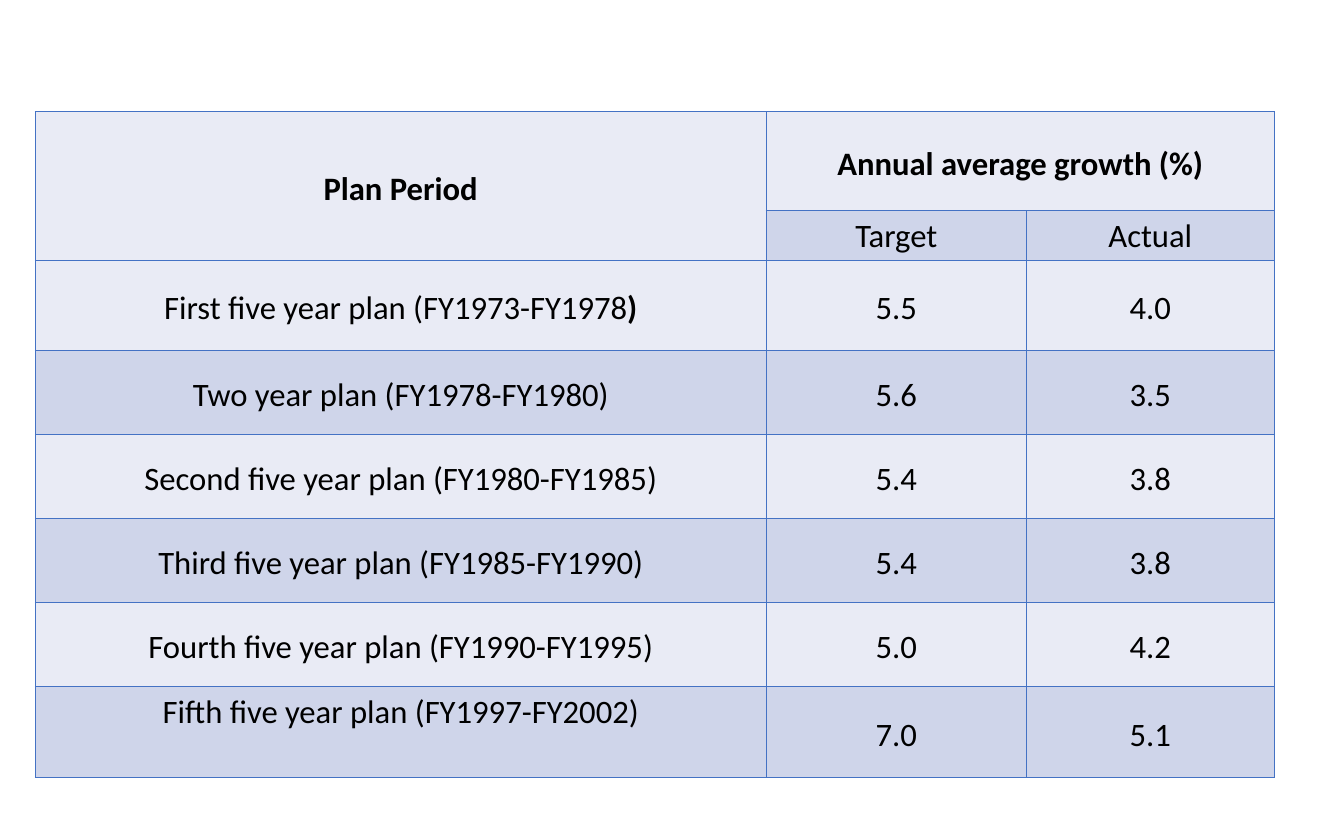
from lxml import etree
from pptx import Presentation
from pptx.dml.color import RGBColor
from pptx.enum.text import MSO_ANCHOR, PP_ALIGN
from pptx.oxml.ns import qn
from pptx.util import Inches, Pt

CENTER = PP_ALIGN.CENTER
TOP, MIDDLE = MSO_ANCHOR.TOP, MSO_ANCHOR.MIDDLE

COLUMN_WIDTHS = [8.7, 3.1, 2.95]
ROW_HEIGHTS = [1.18, 0.59, 1.07, 1, 1, 1, 1, 1.09]
HEADER_ROW, SUBHEADER_ROW = 0, 1
ROWS = [
    ["Plan Period", "Annual average growth (%)", ""],
    ["", "Target", "Actual"],
    ["First five year plan (FY1973-FY1978", "5.5", "4.0"],
    ["Two year plan (FY1978-FY1980)", "5.6", "3.5"],
    ["Second five year plan (FY1980-FY1985)", "5.4", "3.8"],
    ["Third five year plan (FY1985-FY1990)", "5.4", "3.8"],
    ["Fourth five year plan (FY1990-FY1995)", "5.0", "4.2"],
    ["Fifth five year plan (FY1997-FY2002)", "7.0", "5.1"],
]
BOLD_ENDINGS = {(2, 0): ")"}
MERGES = [((0, 0), (1, 0)), ((0, 1), (0, 2))]
TOP_ANCHORED = {(1, 1), (1, 2), (7, 0)}


def color(value):
    return RGBColor.from_string(value)


class GrowthSlide:
    """Holds the table style and the slide being built."""

    font = {"name": "Calibri", "size": Pt(28)}
    cell_format = {"margin_left": Inches(0.12), "margin_right": Inches(0.12),
                   "margin_top": 0, "margin_bottom": 0}
    paragraph_format = {"alignment": CENTER, "line_spacing": 1.15}
    text_color = "000000"
    border_color = "4472C4"
    bands = ["E9EBF5", "CFD5EA"]

    def __init__(self, presentation):
        self.slide = presentation.slides.add_slide(presentation.slide_layouts[6])

    def apply(self, target, values):
        for name, value in values.items():
            setattr(target, name, value)

    def run(self, paragraph, text, bold):
        run = paragraph.add_run()
        run.text = text
        self.apply(run.font, {**self.font, "bold": bold})
        run.font.color.rgb = color(self.text_color)

    def borders(self, cell):
        properties = cell._tc.get_or_add_tcPr()
        for side in ("lnL", "lnR", "lnT", "lnB"):
            line = etree.SubElement(properties, qn(f"a:{side}"), w=str(Pt(1)))
            fill = etree.SubElement(line, qn("a:solidFill"))
            etree.SubElement(fill, qn("a:srgbClr"), val=self.border_color)

    def cell(self, cell, text, band, anchor, bold, bold_ending):
        self.borders(cell)
        cell.fill.solid()
        cell.fill.fore_color.rgb = color(self.bands[band])
        self.apply(cell, {**self.cell_format, "vertical_anchor": anchor})
        paragraph = cell.text_frame.paragraphs[0]
        self.apply(paragraph, self.paragraph_format)
        if text:
            self.run(paragraph, text, bold)
        if bold_ending:
            self.run(paragraph, bold_ending, True)

    def table(self, left, top, rows):
        frame = self.slide.shapes.add_table(
            len(rows), len(COLUMN_WIDTHS), Inches(left), Inches(top),
            Inches(sum(COLUMN_WIDTHS)), Inches(sum(ROW_HEIGHTS)))
        table = frame.table
        for column, width in zip(table.columns, COLUMN_WIDTHS):
            column.width = Inches(width)
        for row, height in zip(table.rows, ROW_HEIGHTS):
            row.height = Inches(height)
        for start, end in MERGES:
            table.cell(*start).merge(table.cell(*end))
        for row_index, texts in enumerate(rows):
            for column_index, text in enumerate(texts):
                place = (row_index, column_index)
                self.cell(table.cell(*place), text, row_index % 2,
                          TOP if place in TOP_ANCHORED else MIDDLE,
                          row_index == HEADER_ROW, BOLD_ENDINGS.get(place))


def main():
    presentation = Presentation()
    presentation.slide_width = Inches(16)
    presentation.slide_height = Inches(10)
    GrowthSlide(presentation).table(0.42, 1.33, ROWS)
    presentation.save("out.pptx")


if __name__ == "__main__":
    main()
